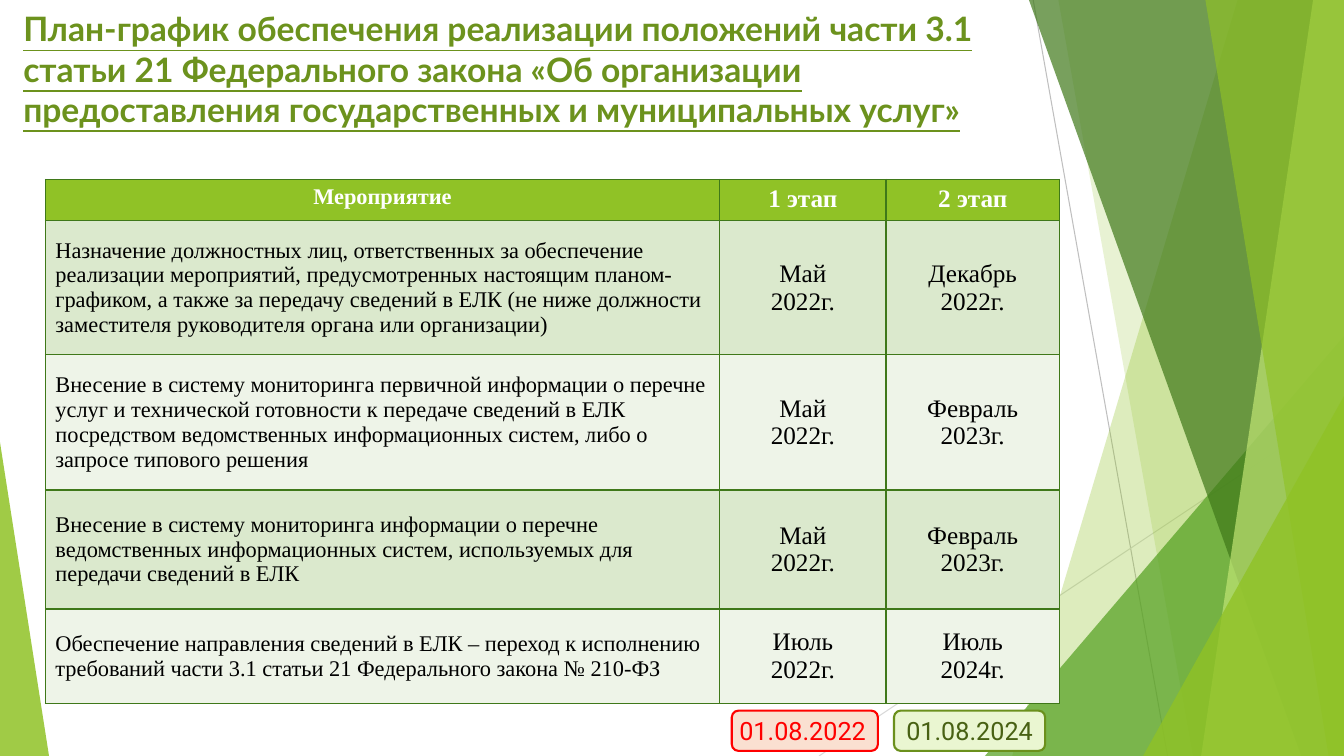
from lxml import etree
from pptx import Presentation
from pptx.dml.color import RGBColor
from pptx.enum.shapes import MSO_CONNECTOR, MSO_SHAPE
from pptx.enum.text import MSO_ANCHOR, MSO_AUTO_SIZE, PP_ALIGN
from pptx.oxml.ns import qn
from pptx.util import Pt

LEFT, CENTER = PP_ALIGN.LEFT, PP_ALIGN.CENTER
TOP, MIDDLE = MSO_ANCHOR.TOP, MSO_ANCHOR.MIDDLE
TRIANGLE, ROUNDED = MSO_SHAPE.ISOSCELES_TRIANGLE, MSO_SHAPE.ROUNDED_RECTANGLE
STRAIGHT = MSO_CONNECTOR.STRAIGHT
NO_AUTOFIT = MSO_AUTO_SIZE.NONE

W, H = 960, 540
SERIF = "Times New Roman"
COLORS = {
    "lime": "90C226", "green": "54A021", "forest": "3F7819", "pale": "C0E474",
    "gray": "BFBFBF", "light_gray": "D9D9D9", "white": "FFFFFF", "black": "000000",
    "title": "6C921D", "odd_row": "DBE9CD", "even_row": "EEF4E8",
    "red": "FF0000", "peach": "FAE0D1",
    "olive": "6B901C", "mint": "EAF6D1", "dark_olive": "486113",
}

TITLE = ("План-график обеспечения реализации положений части 3.1 статьи 21 "
         "Федерального закона «Об организации предоставления государственных "
         "и муниципальных услуг»")
COL_WIDTHS = [481.7, 118.8, 123.9]
ROW_HEIGHTS = [29.5, 95.8, 96.5, 85, 67.7]
ROWS = [
    ("Мероприятие", "1 этап", "2 этап"),
    ("Назначение должностных лиц, ответственных за обеспечение реализации "
     "мероприятий, предусмотренных настоящим планом-графиком, а также за передачу "
     "сведений в ЕЛК (не ниже должности заместителя руководителя органа или "
     "организации)", "Май\n2022г.", "Декабрь\n2022г."),
    ("Внесение в систему мониторинга первичной информации о перечне услуг и "
     "технической готовности к передаче сведений в ЕЛК посредством ведомственных "
     "информационных систем, либо о запросе типового решения",
     "Май\n2022г.", "Февраль\n2023г."),
    ("Внесение в систему мониторинга информации о перечне ведомственных "
     "информационных систем, используемых для передачи сведений в ЕЛК",
     "Май\n2022г.", "Февраль\n2023г."),
    ("Обеспечение направления сведений в ЕЛК – переход к исполнению требований "
     "части 3.1 статьи 21 Федерального закона № 210-ФЗ",
     "Июль\n2022г.", "Июль\n2024г."),
]


def rgb(name):
    return RGBColor.from_string(COLORS[name])


def style_text(tf, font, size, color, align, bold=False, underline=False):
    for p in tf.paragraphs:
        p.alignment = align
        for r in p.runs:
            r.font.name, r.font.size = font, Pt(size)
            r.font.bold, r.font.underline = bold, underline
            r.font.color.rgb = rgb(color)


def fill_glass(sp, color, opacity):
    sp.shadow.inherit = False
    sp.line.fill.background()
    sp.fill.solid()
    sp.fill.fore_color.rgb = rgb(color)
    clr = sp.fill._xPr.find(qn("a:solidFill"))[0]
    etree.SubElement(clr, qn("a:alpha")).set("val", str(opacity * 1000))


def add_line(s, x1, y1, x2, y2, color):
    line = s.shapes.add_connector(STRAIGHT, Pt(x1), Pt(y1), Pt(x2), Pt(y2))
    line.line.color.rgb = rgb(color)
    line.line.width = Pt(0.75)
    etree.SubElement(line._element.spPr, qn("a:effectLst"))


def add_band(s, top_x, bottom_x, color, opacity):
    """Slanted left edge, straight right edge on the slide border."""
    fb = s.shapes.build_freeform(Pt(top_x), 0)
    corners = [(W, 0), (W, H), (bottom_x, H)]
    fb.add_line_segments([(Pt(x), Pt(y)) for x, y in corners], close=True)
    fill_glass(fb.convert_to_shape(), color, opacity)


def add_corner(s, x, y, w, apex, color, opacity):
    """Right triangle standing on the bottom edge of the slide."""
    sp = s.shapes.add_shape(TRIANGLE, Pt(x), Pt(y), Pt(w), Pt(H - y))
    sp.adjustments[0] = apex
    fill_glass(sp, color, opacity)


def add_backdrop(s):
    add_line(s, 738, 0, 834, H, "gray")
    add_line(s, W, 290, 585, H, "light_gray")
    add_band(s, 884, 723, "lime", 30)
    add_band(s, 756, 852, "lime", 20)
    add_corner(s, 703.5, 240, 256.5, 1, "green", 72)
    add_band(s, 735, 929.5, "forest", 70)
    add_band(s, 938, 858, "pale", 70)
    add_band(s, 861, 949, "lime", 65)
    add_corner(s, 816.5, 283, 143.5, 1, "lime", 80)
    add_corner(s, 0, 316, 35, 0, "lime", 85)


def add_title(s, x, y, w, h):
    sp = s.shapes.title
    sp.left, sp.top, sp.width, sp.height = Pt(x), Pt(y), Pt(w), Pt(h)
    tf = sp.text_frame
    tf.text = TITLE
    tf.word_wrap = True
    tf.auto_size = NO_AUTOFIT
    tf.vertical_anchor = TOP
    style_text(tf, "Lato", 24, "title", LEFT, bold=True, underline=True)


def add_borders(cell, color):
    tcPr = cell._tc.get_or_add_tcPr()
    for side in ("lnL", "lnR", "lnT", "lnB"):
        ln = etree.SubElement(tcPr, qn(f"a:{side}"), w=str(Pt(1)))
        solid = etree.SubElement(ln, qn("a:solidFill"))
        etree.SubElement(solid, qn("a:srgbClr"), val=COLORS[color])


def add_schedule(s, x, y):
    frame = s.shapes.add_table(len(ROWS), len(COL_WIDTHS), Pt(x), Pt(y),
                               Pt(sum(COL_WIDTHS)), Pt(sum(ROW_HEIGHTS)))
    table = frame.table
    for col, width in zip(table.columns, COL_WIDTHS):
        col.width = Pt(width)
    for row, height in zip(table.rows, ROW_HEIGHTS):
        row.height = Pt(height)
    for i, texts in enumerate(ROWS):
        header = i == 0
        fill = "lime" if header else "odd_row" if i % 2 else "even_row"
        for j, text in enumerate(texts):
            cell = table.cell(i, j)
            add_borders(cell, "forest")
            cell.fill.solid()
            cell.fill.fore_color.rgb = rgb(fill)
            cell.vertical_anchor = TOP if header else MIDDLE
            cell.text_frame.text = text
            style_text(cell.text_frame, SERIF, 18 if j else 16,
                       "white" if header else "black",
                       CENTER if header or j else LEFT, bold=header)


def add_deadline(s, x, y, w, h, text, fill, line, color, align):
    sp = s.shapes.add_shape(ROUNDED, Pt(x), Pt(y), Pt(w), Pt(h))
    sp.shadow.inherit = False
    sp.fill.solid()
    sp.fill.fore_color.rgb = rgb(fill)
    sp.line.color.rgb = rgb(line)
    sp.line.width = Pt(1.5)
    tf = sp.text_frame
    tf.text = text
    tf.word_wrap = False
    tf.margin_left = tf.margin_right = Pt(4)
    tf.vertical_anchor = MIDDLE
    style_text(tf, "Roboto", 18, color, align)


def main():
    prs = Presentation()
    prs.slide_width, prs.slide_height = Pt(W), Pt(H)
    s = prs.slides.add_slide(prs.slide_layouts[5])
    add_backdrop(s)
    add_title(s, 9.4, 2.2, 737, 94)
    add_schedule(s, 32.4, 128.2)
    # Deadlines under the two stage columns
    add_deadline(s, 522.7, 507.6, 104.4, 28.8, "01.08.2022",
                 "peach", "red", "red", LEFT)
    add_deadline(s, 638.6, 507.6, 108, 28.8, "01.08.2024",
                 "mint", "olive", "dark_olive", CENTER)
    prs.save("out.pptx")


if __name__ == "__main__":
    main()
